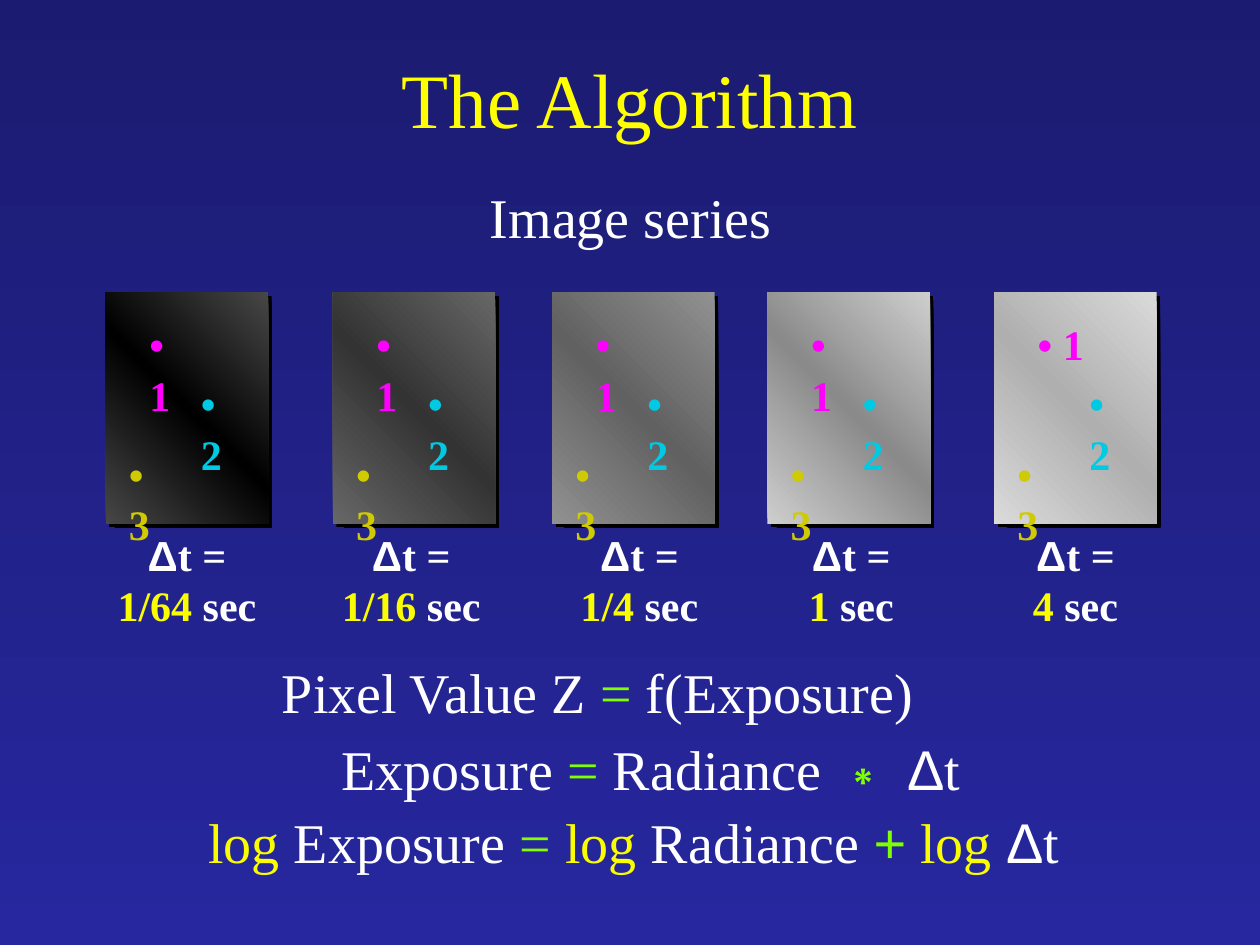
from lxml.etree import SubElement
from pptx import Presentation
from pptx.dml.color import RGBColor
from pptx.enum.shapes import MSO_SHAPE
from pptx.enum.text import MSO_ANCHOR, PP_ALIGN
from pptx.oxml.ns import qn
from pptx.util import Cm, Pt

WHITE = RGBColor(0xFF, 0xFF, 0xFF)
BLACK = RGBColor(0x00, 0x00, 0x00)
TITLE_YELLOW = RGBColor(0xFF, 0xFF, 0x00)
YELLOW = RGBColor(0xFA, 0xFD, 0x00)
GREEN = RGBColor(0x7F, 0xFF, 0x00)
MAGENTA = RGBColor(0xFF, 0x00, 0xFF)
CYAN = RGBColor(0x00, 0xCA, 0xE3)
OLIVE = RGBColor(0xCF, 0xCA, 0x02)
NAVY_TOP = RGBColor(0x1B, 0x1B, 0x71)
NAVY_BOTTOM = RGBColor(0x27, 0x27, 0x9F)

SERIF = "Times New Roman"
SANS = "Arial"

PANEL_TOP, PANEL_WIDTH, PANEL_HEIGHT = 5.89, 3.28, 4.67
CAPTION_TOP, CAPTION_HEIGHT = 10.54, 2.29
MARKS = [("3", OLIVE, 0.22, 3.02), ("1", MAGENTA, 0.63, 0.41), ("2", CYAN, 1.67, 1.6)]
MARK_SIZE = (1.4, 1.27)
LAST_PANEL_SIZES = {"1": (2.77, 1.27), "2": (2.11, 2.31)}

PANELS = [
    (2.13, "474747", "000000", 1.42, 4.7, "1/64"),
    (6.71, "676767", "333333", 5.94, 4.7, "1/16"),
    (11.13, "919191", "616161", 10.82, 4.14, "1/4"),
    (15.47, "CECECE", "8A8A8A", 15.42, 3.48, "1"),
    (20.04, "DADADA", "AFAFAF", 19.94, 3.48, "4"),
]

FORMULAS = [
    ((4.01, 13.13, 16.08, 1.6), [
        ("Pixel Value Z ", WHITE, SERIF), ("=", GREEN, SERIF), (" f(Exposure)", WHITE, SERIF)]),
    ((5.97, 14.68, 14.3, 1.63), [
        ("Exposure ", WHITE, SERIF), ("=", GREEN, SERIF), (" Radiance ", WHITE, SERIF),
        ("∗ ", GREEN, SANS), ("Δ", WHITE, SANS), ("t", WHITE, SERIF)]),
    ((3.53, 16.15, 18.49, 1.6), [
        ("log", YELLOW, SERIF), (" Exposure ", WHITE, SERIF), ("= ", GREEN, SERIF),
        ("log", YELLOW, SERIF), (" Radiance ", WHITE, SERIF), ("+", GREEN, SANS),
        (" log ", YELLOW, SERIF), ("Δ", WHITE, SANS), ("t", WHITE, SERIF)]),
]


def add_shadow(parent):
    effects = SubElement(parent, qn("a:effectLst"))
    shadow = SubElement(effects, qn("a:outerShdw"), dist=str(Pt(2.8)), dir="2700000",
                        algn="ctr", rotWithShape="0")
    SubElement(shadow, qn("a:srgbClr"), val=str(BLACK))
    return effects


def set_gradient(fill, element, colors, angle):
    fill.gradient()
    fill.gradient_angle = angle
    stops = next(element.iter(qn("a:gsLst")))
    for stop in list(stops):
        stops.remove(stop)
    for index, color in enumerate(colors):
        position = 100000 * index // (len(colors) - 1)
        stop = SubElement(stops, qn("a:gs"), pos=str(position))
        SubElement(stop, qn("a:srgbClr"), val=str(color))


def format_span(span, size, color, font=SERIF, bold=False, shadow=True):
    span.font.size = Pt(size)
    span.font.bold = bold
    span.font.color.rgb = color
    span.font.name = font
    if shadow:
        properties = span.font._element
        properties.find(qn("a:solidFill")).addnext(add_shadow(properties))


def add_text(page, area, lines, size, bold=False, shadow=True, align=PP_ALIGN.CENTER):
    box = page.shapes.add_textbox(*[Cm(length) for length in area])
    box.text_frame.word_wrap = True
    para = box.text_frame.paragraphs[0]
    para.alignment = align
    for index, spans in enumerate(lines):
        if index:
            para.add_line_break()
        for text, color, font in spans:
            span = para.add_run()
            span.text = text
            format_span(span, size, color, font, bold, shadow)


def add_title(page):
    title = page.shapes.title
    title.left, title.top, title.width, title.height = Cm(1.9), Cm(0.38), Cm(21.59), Cm(3.18)
    title.text_frame.text = "The Algorithm"
    title.text_frame.vertical_anchor = MSO_ANCHOR.MIDDLE
    para = title.text_frame.paragraphs[0]
    para.alignment = PP_ALIGN.CENTER
    format_span(para.runs[0], 44, TITLE_YELLOW)


def add_panel(page, left, edge, middle, mark_sizes):
    panel = page.shapes.add_shape(MSO_SHAPE.RECTANGLE, Cm(left), Cm(PANEL_TOP),
                                  Cm(PANEL_WIDTH), Cm(PANEL_HEIGHT))
    set_gradient(panel.fill, panel._element, [edge, middle, edge], 45)
    panel.line.fill.background()
    add_shadow(panel._element.spPr)
    for number, color, right, down in MARKS:
        width, height = mark_sizes.get(number, MARK_SIZE)
        area = (left + right, PANEL_TOP + down, width, height)
        if height > MARK_SIZE[1]:
            lines = [[("• ", color, SERIF)], [(number, color, SERIF)]]
        else:
            lines = [[(f"• {number}", color, SERIF)]]
        add_text(page, area, lines, 24, bold=True, align=PP_ALIGN.LEFT)


def add_caption(page, left, width, seconds):
    lines = [[("Δ", WHITE, SANS), ("t =", WHITE, SERIF)],
             [(seconds, YELLOW, SERIF), (" sec", WHITE, SERIF)]]
    add_text(page, (left, CAPTION_TOP, width, CAPTION_HEIGHT), lines, 24,
             bold=True, shadow=False)


def main():
    deck = Presentation()
    deck.slide_width, deck.slide_height = Cm(25.4), Cm(19.05)
    page = deck.slides.add_slide(deck.slide_layouts[5])
    set_gradient(page.background.fill, page._element, [NAVY_TOP, NAVY_BOTTOM], 270)
    add_title(page)
    add_text(page, (8.56, 3.56, 8.31, 1.6), [[("Image series", WHITE, SERIF)]], 32)
    for left, edge, middle, caption_left, caption_width, seconds in PANELS:
        mark_sizes = LAST_PANEL_SIZES if left == PANELS[-1][0] else {}
        add_panel(page, left, edge, middle, mark_sizes)
        add_caption(page, caption_left, caption_width, seconds)
    for area, spans in FORMULAS:
        add_text(page, area, [spans], 32)
    deck.save("out.pptx")


if __name__ == "__main__":
    main()
